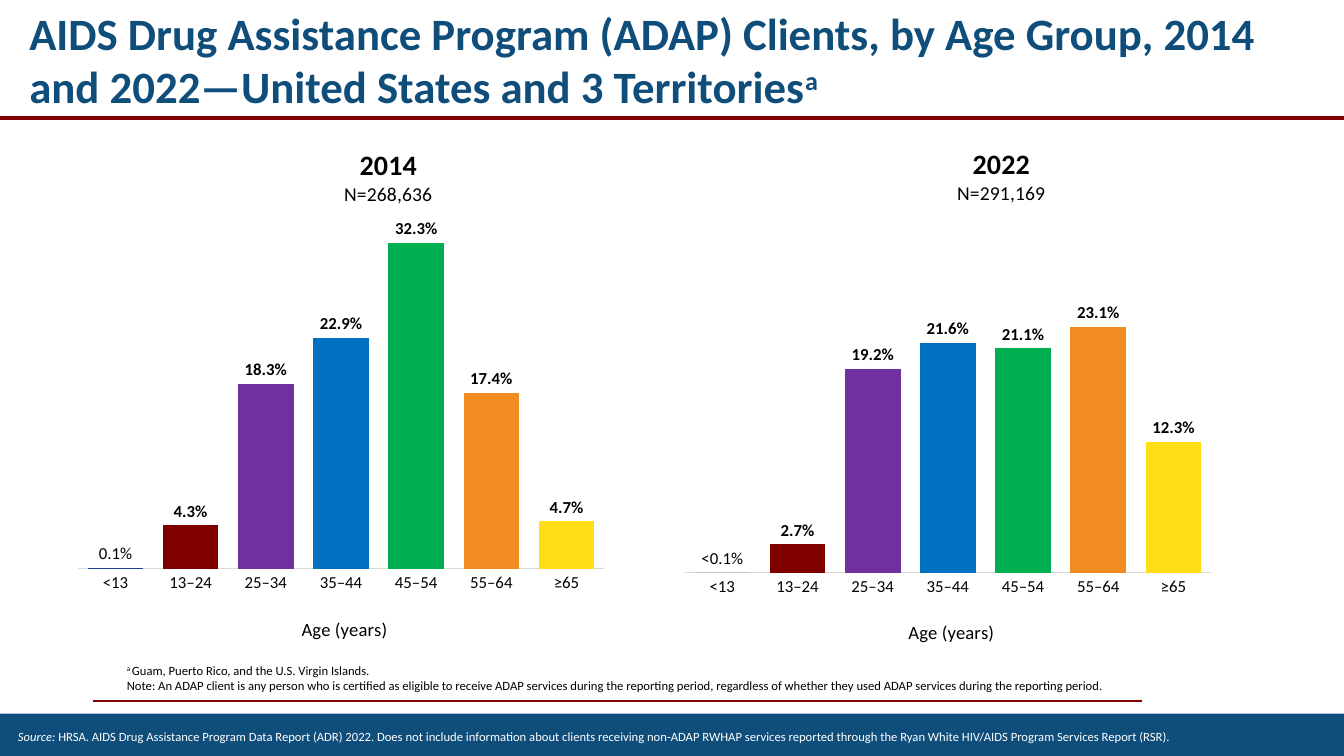
from lxml import etree
from pptx import Presentation
from pptx.chart.data import CategoryChartData
from pptx.dml.color import RGBColor
from pptx.enum.chart import XL_CHART_TYPE as ChartType, XL_LABEL_POSITION as LabelPos
from pptx.enum.chart import XL_TICK_MARK as TickMark
from pptx.enum.shapes import MSO_CONNECTOR as Connector, MSO_SHAPE as Shape
from pptx.enum.text import MSO_ANCHOR as Anchor, MSO_AUTO_SIZE as AutoSize, PP_ALIGN as Align
from pptx.oxml.ns import qn
from pptx.util import Inches, Pt

COLORS = {"navy": "0F4D7B", "maroon": "800000", "white": "FFFFFF", "black": "000000",
          "axis": "D9D9D9", "series": "006699"}
AGE_COLORS = {"<13": "21409A", "13–24": "800000", "25–34": "7030A0", "35–44": "0070C0",
              "45–54": "00B050", "55–64": "F18C22", "≥65": "FFDE17"}


def rgb(name):
    return RGBColor.from_string(COLORS.get(name, name))


def set_layout(parent, index, **values):
    """Give a chart part a manual position, in fractions of the chart."""
    for old in parent.findall(qn("c:layout")):
        parent.remove(old)
    layout = etree.Element(qn("c:layout"))
    manual = etree.SubElement(layout, qn("c:manualLayout"))
    for tag, value in values.items():
        etree.SubElement(manual, qn(f"c:{tag}")).set("val", str(value))
    parent.insert(index, layout)


class AgeSlide:
    font = "Calibri"

    def __init__(self, prs):
        self.slide = prs.slides.add_slide(prs.slide_layouts[5])
        self.shapes = self.slide.shapes

    def style(self, font, size, color="black", bold=False, italic=False):
        font.name, font.size = self.font, Pt(size)
        font.bold, font.italic = bold, italic
        font.color.rgb = rgb(color)

    def run(self, p, text, size, color="black", bold=False, italic=False, raised=False):
        r = p.add_run()
        r.text = text
        self.style(r.font, size, color, bold, italic)
        if raised:
            r.font._element.set("baseline", "30000")

    def title(self, text, mark):
        sp = self.shapes.title
        sp.left, sp.top, sp.width, sp.height = map(Inches, (0.19, 0, 12.69, 1.17))
        tf = sp.text_frame
        tf.word_wrap, tf.auto_size, tf.vertical_anchor = True, AutoSize.NONE, Anchor.MIDDLE
        p = tf.paragraphs[0]
        p.alignment = Align.LEFT
        self.run(p, text, 32, "navy", bold=True)
        self.run(p, mark, 32, "navy", bold=True, raised=True)

    def text_box(self, box):
        tf = self.shapes.add_textbox(*map(Inches, box)).text_frame
        tf.word_wrap = True
        return tf

    def bar(self, box, color):
        sp = self.shapes.add_shape(Shape.RECTANGLE, *map(Inches, box))
        sp.shadow.inherit = False
        sp.fill.solid()
        sp.fill.fore_color.rgb = rgb(color)
        sp.line.fill.background()

    def rule(self, left, right, y, weight):
        line = self.shapes.add_connector(Connector.STRAIGHT, *map(Inches, (left, y, right, y)))
        line.line.color.rgb = rgb("maroon")
        line.line.width = Pt(weight)
        etree.SubElement(line._element.spPr, qn("a:effectLst"))

    def chart(self, box, year, total, values, first_label, top, plot, title_at, axis_title_at):
        data = CategoryChartData(number_format="0.00%")
        data.categories = list(AGE_COLORS)
        data.add_series("Series 1", values)
        chart = self.shapes.add_chart(ChartType.COLUMN_CLUSTERED, *map(Inches, box), data).chart
        self.style(chart.font, 10)
        chart.has_legend = False

        # Chart title
        chart.has_title = True
        tf = chart.chart_title.text_frame
        self.run(tf.paragraphs[0], year, 20, bold=True)
        self.run(tf.add_paragraph(), total, 14)
        chart.chart_title.include_in_layout = False
        set_layout(chart.chart_title._element, 1, xMode="edge", yMode="edge",
                   x=title_at[0], y=title_at[1])

        # Axes
        ages, shares = chart.category_axis, chart.value_axis
        ages.major_tick_mark = ages.minor_tick_mark = TickMark.NONE
        ages.format.line.color.rgb = rgb("axis")
        ages.format.line.width = Pt(0.75)
        self.style(ages.tick_labels.font, 12)
        self.run(ages.axis_title.text_frame.paragraphs[0], "Age (years)", 13.3)
        set_layout(ages.axis_title._element, 1, xMode="edge", yMode="edge",
                   x=axis_title_at[0], y=axis_title_at[1])
        shares.visible = shares.has_major_gridlines = False
        shares.minimum_scale, shares.maximum_scale = 0, top

        # Columns, one colour per age group
        columns = chart.plots[0]
        columns.gap_width, columns.overlap, columns.vary_by_categories = 35, -27, False
        series = columns.series[0]
        series.format.fill.solid()
        series.format.fill.fore_color.rgb = rgb("series")
        for i, color in enumerate(AGE_COLORS.values()):
            fill = series.points[i].format.fill
            fill.solid()
            fill.fore_color.rgb = rgb(color)

        # Value labels
        labels = series.data_labels
        labels.show_value, labels.position = True, LabelPos.OUTSIDE_END
        labels.number_format, labels.number_format_is_linked = "0.0%", False
        self.style(labels.font, 12, bold=True)
        first = series.points[0].data_label
        self.run(first.text_frame.paragraphs[0], first_label, 12)
        first.position = LabelPos.OUTSIDE_END

        x, y, w, h = plot
        set_layout(columns._element.getparent(), 0, layoutTarget="inner", xMode="edge",
                   yMode="edge", x=x, y=y, w=w, h=h)


def main():
    prs = Presentation()
    prs.slide_width, prs.slide_height = Inches(13.33), Inches(7.5)
    s = AgeSlide(prs)

    # Frame and source line
    s.rule(0.92, 11.33, 6.95, 1.5)
    s.bar((0, 7.08, 13.33, 0.42), "navy")
    s.rule(0, 13.33, 1.17, 3)
    p = s.text_box((0.08, 7.18, 12.26, 0.25)).paragraphs[0]
    s.run(p, "Source: ", 9, "white", italic=True)
    s.run(p, "HRSA. AIDS Drug Assistance Program Data Report (ADR) 2022. Does not include "
          "information about clients receiving non-ADAP RWHAP services reported through the "
          "Ryan White HIV/AIDS Program Services Report (RSR).", 9, "white")

    # Title
    s.title("AIDS Drug Assistance Program (ADAP) Clients, by Age Group, 2014 and "
            "2022—United States and 3 Territories", "a")

    # Footnotes
    tf = s.text_box((1.16, 6.53, 10.09, 0.56))
    s.run(tf.paragraphs[0], "a ", 9, raised=True)
    s.run(tf.paragraphs[0], "Guam, Puerto Rico, and the U.S. Virgin Islands.", 9)
    s.run(tf.add_paragraph(), "Note: An ADAP client is any person who is certified as eligible "
          "to receive ADAP services during the reporting period, regardless of whether they "
          "used ADAP services during the reporting period.", 9)

    # Charts
    s.chart((6.67, 1.25, 6.07, 5.28), "2022", "N=291,169",
            (0, 0.027, 0.192, 0.216, 0.211, 0.231, 0.123), "<0.1%", 0.25,
            plot=(0.02, 0.34, 0.86, 0.5), title_at=(0.46, 0.03), axis_title_at=(0.38, 0.92))
    s.chart((0.59, 1.25, 6.07, 5.56), "2014", "N=268,636",
            (0.001, 0.043, 0.183, 0.229, 0.323, 0.174, 0.047), "0.1%", 0.35,
            plot=(0.03, 0.16, 0.86, 0.63), title_at=(0.46, 0.03), axis_title_at=(0.39, 0.87))

    prs.save("out.pptx")


if __name__ == "__main__":
    main()
